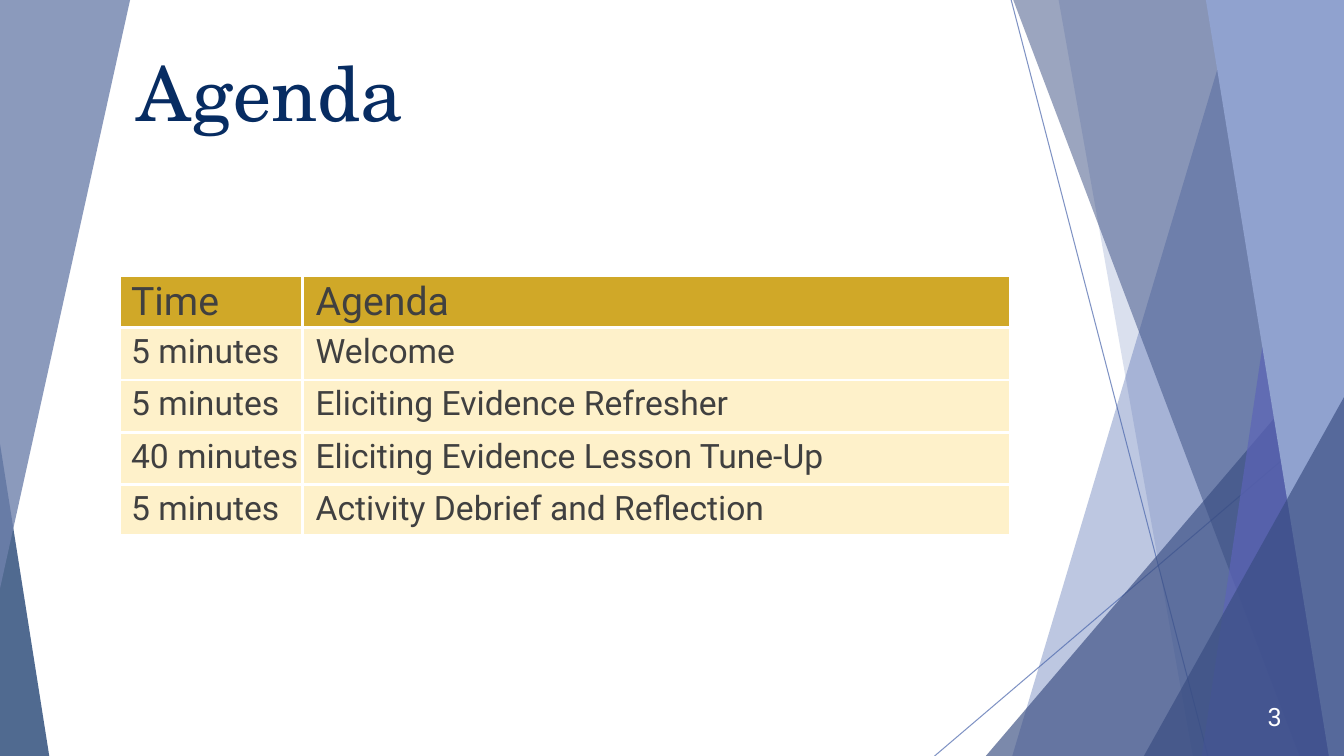
from dataclasses import dataclass

from lxml.etree import SubElement
from pptx import Presentation
from pptx.dml.color import RGBColor
from pptx.enum.shapes import MSO_CONNECTOR, MSO_SHAPE
from pptx.enum.text import MSO_ANCHOR, PP_ALIGN
from pptx.oxml.ns import qn
from pptx.util import Inches, Pt


@dataclass(frozen=True)
class Theme:
    # Colours
    blue: str = "4A66AC"
    dark: str = "384C81"
    violet: str = "5C64B7"
    light: str = "90A2CF"
    navy: str = "072C62"
    slate: str = "6F81AC"
    gold: str = "D0A828"
    cream: str = "FEF1CA"
    ink: str = "404040"
    white: str = "FFFFFF"
    # Fonts and type sizes
    serif: str = "TeX Gyre Schola"
    sans: str = "Roboto"
    title: int = 54
    head: int = 28
    body: int = 24
    page: int = 18
    # Line widths
    hair: float = 0.75
    inner: float = 2.25
    outer: float = 4.5


class Deck:
    """Places elements by percent of the slide's width and height."""

    def __init__(self, theme):
        self.theme = theme
        self.prs = Presentation()
        self.prs.slide_width = Inches(13.33)
        self.prs.slide_height = Inches(7.5)
        self.slide = self.prs.slides.add_slide(self.prs.slide_layouts[6])
        self.shapes = self.slide.shapes

    def x(self, share):
        return round(self.prs.slide_width * share / 100)

    def y(self, share):
        return round(self.prs.slide_height * share / 100)

    def box(self, left, top, wide, high):
        return self.x(left), self.y(top), self.x(wide), self.y(high)

    def fade(self, item, alpha):
        for color in item.element.iter(qn("a:srgbClr")):
            SubElement(color, qn("a:alpha"), val=str(alpha * 1000))

    def paint(self, shape, color, alpha):
        shape.shadow.inherit = False
        shape.fill.solid()
        shape.fill.fore_color.rgb = RGBColor.from_string(color)
        shape.line.fill.background()
        self.fade(shape, alpha)

    def line(self, start, end):
        link = self.shapes.add_connector(
            MSO_CONNECTOR.STRAIGHT,
            self.x(start[0]), self.y(start[1]), self.x(end[0]), self.y(end[1]))
        link.line.color.rgb = RGBColor.from_string(self.theme.blue)
        link.line.width = Pt(self.theme.hair)
        SubElement(link.element.spPr, qn("a:effectLst"))
        self.fade(link, 70)

    def band(self, top, foot, color, alpha):
        """Fill from a slanted left edge to the slide's right edge."""
        form = self.shapes.build_freeform(self.x(top), 0)
        form.add_line_segments(
            [(self.x(a), self.y(b)) for a, b in [(100, 0), (100, 100), (foot, 100)]])
        self.paint(form.convert_to_shape(), color, alpha)

    def wedge(self, box, peak, color, alpha, flip=False):
        shape = self.shapes.add_shape(MSO_SHAPE.ISOSCELES_TRIANGLE, *self.box(*box))
        shape.adjustments[0] = peak
        if flip:
            shape.element.spPr.xfrm.set("flipV", "1")
        self.paint(shape, color, alpha)

    def add_words(self, para, text, size, font, color):
        run = para.add_run()
        run.text = text
        run.font.size = Pt(size)
        run.font.name = font
        run.font.color.rgb = RGBColor.from_string(color)

    def text(self, box, text, size, font, color,
             align=PP_ALIGN.LEFT, anchor=MSO_ANCHOR.TOP):
        frame = self.shapes.add_textbox(*self.box(*box)).text_frame
        frame.word_wrap = True
        frame.vertical_anchor = anchor
        para = frame.paragraphs[0]
        para.alignment = align
        self.add_words(para, text, size, font, color)

    def edge(self, cell, side, width):
        props = cell._tc.get_or_add_tcPr()
        line = SubElement(props, qn("a:ln" + side), w=str(Pt(width)))
        fill = SubElement(line, qn("a:solidFill"))
        SubElement(fill, qn("a:srgbClr"), val=self.theme.white)

    def cell(self, cell, text, head, rims):
        look = self.theme
        for side, rim in rims.items():
            self.edge(cell, side, look.outer if rim else look.inner)
        cell.fill.solid()
        cell.fill.fore_color.rgb = RGBColor.from_string(
            look.gold if head else look.cream)
        cell.margin_left, cell.margin_top = Inches(0.13), Inches(0.02)
        cell.margin_right, cell.margin_bottom = Inches(0.03), 0
        para = cell.text_frame.paragraphs[0]
        para.line_spacing = 1.07
        self.add_words(para, text, look.head if head else look.body,
                       look.sans, look.ink)

    def table(self, left, top, wides, highs, rows):
        table = self.shapes.add_table(
            len(rows), len(wides),
            *self.box(left, top, sum(wides), sum(highs))).table
        table.first_row = table.horz_banding = False
        for col, wide in zip(table.columns, wides):
            col.width = self.x(wide)
        for row, high in zip(table.rows, highs):
            row.height = self.y(high)
        for r, row in enumerate(rows):
            for c, text in enumerate(row):
                rims = {"L": c == 0, "R": c == len(wides) - 1,
                        "T": r == 0, "B": r == len(rows) - 1}
                self.cell(table.cell(r, c), text, r == 0, rims)


def main():
    look = Theme()
    deck = Deck(look)

    # Right-hand facets, from back to front
    deck.line((75.24, 0), (89.87, 100))
    deck.line((100, 53.87), (69.54, 100))
    deck.band(92.12, 75.32, look.blue, 36)
    deck.band(78.77, 88.75, look.blue, 20)
    deck.wedge((73.29, 44.53, 26.71, 55.6), 1, look.dark, 66)
    deck.band(75.39, 96.7, look.dark, 50)
    deck.band(97.75, 89.42, look.violet, 70)
    deck.band(89.72, 98.87, look.light, 100)
    deck.wedge((85.07, 52.53, 14.93, 47.6), 1, look.dark, 66)

    # Left-hand facets
    deck.wedge((0, 58.67, 3.68, 41.47), 0, look.navy, 70)
    deck.wedge((0, 0, 9.68, 77.87), 0, look.slate, 80, flip=True)

    # Title
    deck.text((9.45, 5.47, 70.52, 19.2), "Agenda",
              look.title, look.serif, look.navy)

    # Agenda table
    rows = [
        ("Time", "Agenda"),
        ("5 minutes", "Welcome"),
        ("5 minutes", "Eliciting Evidence Refresher"),
        ("40 minutes", "Eliciting Evidence Lesson Tune-Up"),
        ("5 minutes", "Activity Debrief and Reflection"),
    ]
    deck.table(8.78, 36.27, [13.73, 52.74], [7.07] + [6.93] * 4, rows)

    # Page number
    deck.text((90.47, 92.13, 5.63, 5.33), "3", look.page, look.sans, look.white,
              PP_ALIGN.RIGHT, MSO_ANCHOR.MIDDLE)

    deck.prs.save("out.pptx")


if __name__ == "__main__":
    main()
